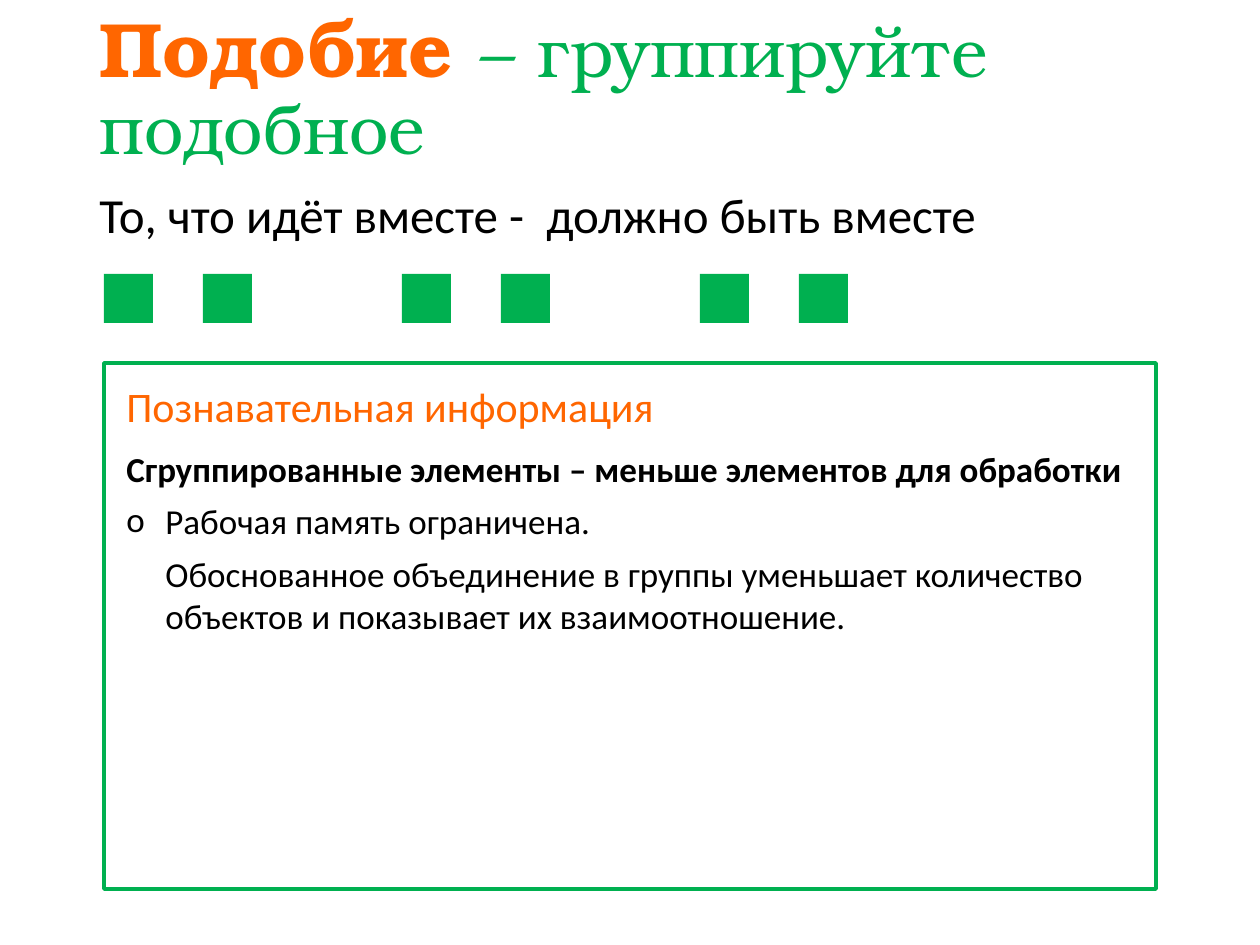
from lxml import etree
from pptx import Presentation
from pptx.dml.color import RGBColor
from pptx.enum.shapes import MSO_SHAPE
from pptx.enum.text import MSO_ANCHOR
from pptx.oxml.ns import qn
from pptx.util import Pt

RECTANGLE = MSO_SHAPE.RECTANGLE
MIDDLE = MSO_ANCHOR.MIDDLE
GREEN = RGBColor(0x00, 0xB0, 0x50)
ORANGE = RGBColor(0xFF, 0x66, 0x00)
BLACK = RGBColor(0, 0, 0)
HEADING_FONT = "TeX Gyre Bonum"
BODY_FONT = "Calibri"
SCALE = 914400 / 126


def px(*lengths):
    return [round(length * SCALE) for length in lengths]


def add_text(para, text, size, color, font=BODY_FONT, bold=False):
    span = para.add_run()
    span.text = text
    span.font.size = Pt(size)
    span.font.color.rgb = color
    span.font.name = font
    span.font.bold = bold


deck = Presentation()
deck.slide_width, deck.slide_height = px(1260, 945)
page = deck.slides.add_slide(deck.slide_layouts[6])

title = page.shapes.add_textbox(*px(87, 26, 1086, 129)).text_frame
title.word_wrap = True
title.vertical_anchor = MIDDLE
para = title.paragraphs[0]
para.line_spacing = 0.9
add_text(para, "Подобие ", 44, ORANGE, HEADING_FONT, True)
add_text(para, "– группируйте подобное", 40, GREEN, HEADING_FONT)

subtitle = page.shapes.add_textbox(*px(87, 185, 1086, 69)).text_frame
subtitle.word_wrap = True
para = subtitle.paragraphs[0]
para.line_spacing = 0.9
para.space_before = Pt(10)
add_text(para, "То, что идёт вместе -  должно быть вместе", 28, BLACK)

squares = page.shapes.add_group_shape()
for pair in range(3):
    for member in range(2):
        left = 104 + pair * 298 + member * 99
        square = squares.shapes.add_shape(RECTANGLE, *px(left, 274, 49, 49))
        square.shadow.inherit = False
        square.fill.solid()
        square.fill.fore_color.rgb = GREEN
        square.line.fill.background()

panel = page.shapes.add_group_shape()
frame = panel.shapes.add_shape(RECTANGLE, *px(104, 363, 1052, 526))
frame.shadow.inherit = False
frame.fill.background()
frame.line.color.rgb = GREEN
frame.line.width = Pt(2.25)

heading = panel.shapes.add_textbox(*px(114, 374, 1022, 63)).text_frame
heading.word_wrap = True
add_text(heading.paragraphs[0], "Познавательная информация", 24, ORANGE)

details = panel.shapes.add_textbox(*px(114, 441, 1022, 200)).text_frame
details.word_wrap = True
lines = [
    ("Сгруппированные элементы – меньше элементов для обработки", True, 0, 0),
    ("Рабочая память ограничена.", False, 39, -39),
    ("Обоснованное объединение в группы уменьшает количество объектов "
     "и показывает их взаимоотношение.", False, 39, 0),
]
for index, (text, bold, margin, indent) in enumerate(lines):
    para = details.add_paragraph() if index else details.paragraphs[0]
    para.space_after = Pt(6)
    add_text(para, text, 20, BLACK, bold=bold)
    properties = para._p.get_or_add_pPr()
    margin, indent = px(margin, indent)
    properties.set("marL", str(margin))
    properties.set("indent", str(indent))
    if indent:
        etree.SubElement(properties, qn("a:buFont")).set("typeface", BODY_FONT)
        etree.SubElement(properties, qn("a:buChar")).set("char", "o")

deck.save("out.pptx")
